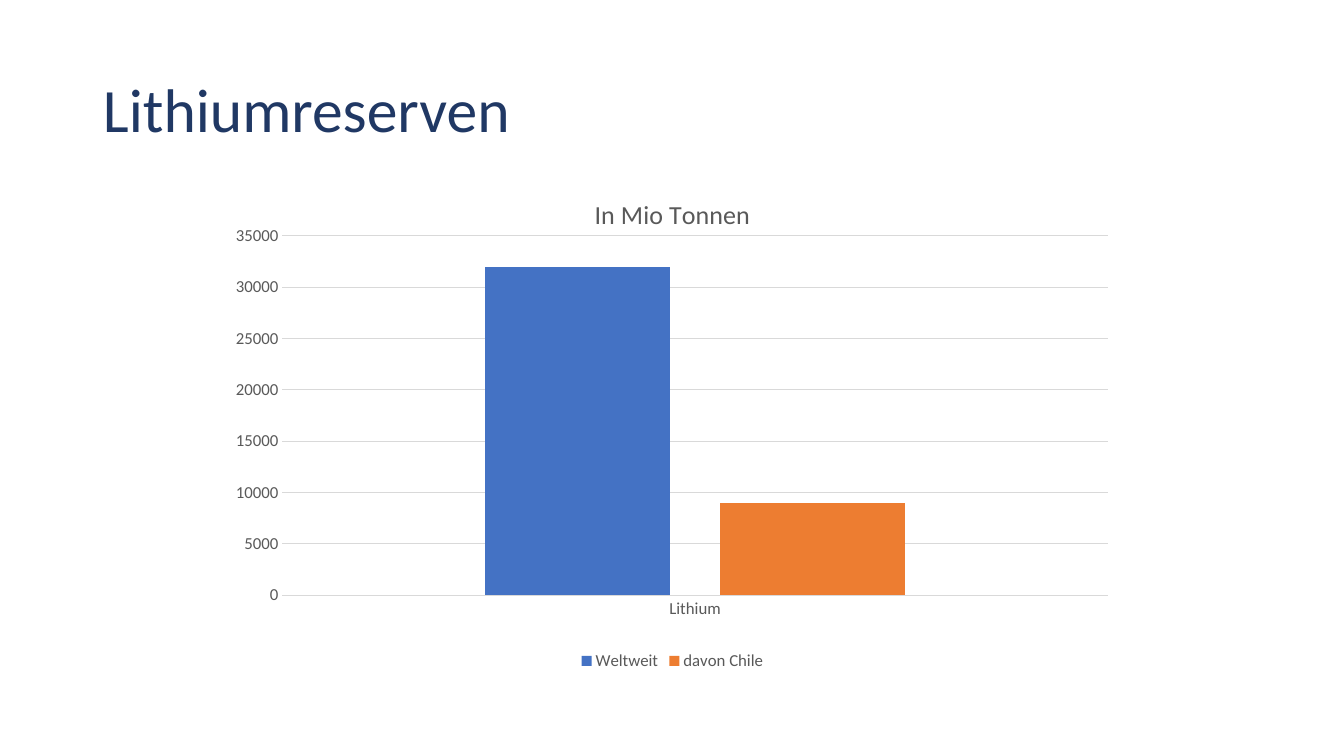
from dataclasses import dataclass

import pptx
import pptx.chart.data
import pptx.dml.color
import pptx.enum.chart
import pptx.enum.text
import pptx.oxml
import pptx.oxml.ns
import pptx.util

EMU_PER_PX = 914400 / 100.8


def px(length):
    return pptx.util.Emu(round(length * EMU_PER_PX))


def rgb(code):
    return pptx.dml.color.RGBColor.from_string(code)


@dataclass(frozen=True)
class Theme:
    font: str = "Calibri"
    title_color: str = "203864"
    label_color: str = "595959"
    grid_color: str = "D9D9D9"
    series_colors: tuple = ("4472C4", "ED7D31")
    title_size: float = 44
    chart_title_size: float = 18.6
    label_size: float = 12
    line_width: float = 0.75


class SlideBuilder:
    def __init__(self, slide, theme):
        self.slide = slide
        self.theme = theme

    def set_font(self, font, size, color):
        font.name = self.theme.font
        font.size = pptx.util.Pt(size)
        font.bold = False
        font.color.rgb = rgb(color)

    def add_title(self, text, left, top, width, height):
        box = self.slide.shapes.add_textbox(px(left), px(top), px(width), px(height))
        frame = box.text_frame
        frame.word_wrap = True
        frame.vertical_anchor = pptx.enum.text.MSO_ANCHOR.MIDDLE
        paragraph = frame.paragraphs[0]
        paragraph.text = text
        paragraph.line_spacing = 0.9
        self.set_font(paragraph.font, self.theme.title_size, self.theme.title_color)

    def add_column_chart(self, title, categories, series, left, top, width, height):
        data = pptx.chart.data.CategoryChartData()
        data.categories = categories
        for name, values in series.items():
            data.add_series(name, values)
        chart = self.slide.shapes.add_chart(
            pptx.enum.chart.XL_CHART_TYPE.COLUMN_CLUSTERED,
            px(left), px(top), px(width), px(height), data,
        ).chart
        self.set_font(chart.font, self.theme.label_size, self.theme.label_color)

        chart.has_title = True
        chart.chart_title.include_in_layout = False
        paragraph = chart.chart_title.text_frame.paragraphs[0]
        paragraph.text = title
        self.set_font(paragraph.font, self.theme.chart_title_size, self.theme.label_color)

        chart.has_legend = True
        chart.legend.position = pptx.enum.chart.XL_LEGEND_POSITION.BOTTOM
        chart.legend.include_in_layout = False

        plot = chart.plots[0]
        plot.gap_width = 219
        plot.overlap = -27
        plot.vary_by_categories = False
        for column, color in zip(plot.series, self.theme.series_colors):
            column.format.fill.solid()
            column.format.fill.fore_color.rgb = rgb(color)
        self.style_axes(chart)
        return chart

    def style_axes(self, chart):
        for axis in (chart.category_axis, chart.value_axis):
            axis.major_tick_mark = pptx.enum.chart.XL_TICK_MARK.NONE
            axis.minor_tick_mark = pptx.enum.chart.XL_TICK_MARK.NONE
        chart.value_axis.format.line.fill.background()
        chart.value_axis.has_major_gridlines = True
        gridlines = chart.value_axis.major_gridlines
        for line in (chart.category_axis.format.line, gridlines.format.line):
            line.color.rgb = rgb(self.theme.grid_color)
            line.width = pptx.util.Pt(self.theme.line_width)

    def place_plot(self, chart, **fractions):
        """Fix the inner plot area as fractions (x, y, w, h) of the chart."""
        settings = {"layoutTarget": "inner", "xMode": "edge", "yMode": "edge", **fractions}
        items = "".join(f'<c:{name} val="{value}"/>' for name, value in settings.items())
        namespace = pptx.oxml.ns.nsdecls("c")
        layout = pptx.oxml.parse_xml(
            f"<c:layout {namespace}><c:manualLayout>{items}</c:manualLayout></c:layout>"
        )
        plot_area = chart.plots[0]._element.getparent()
        for previous in plot_area.findall(pptx.oxml.ns.qn("c:layout")):
            plot_area.remove(previous)
        plot_area.insert(0, layout)


def main():
    presentation = pptx.Presentation()
    presentation.slide_width = px(1344)
    presentation.slide_height = px(756)
    slide = presentation.slides.add_slide(presentation.slide_layouts[6])
    builder = SlideBuilder(slide, Theme())

    builder.add_title("Lithiumreserven", 93, 40, 1159, 146)
    chart = builder.add_column_chart(
        "In Mio Tonnen", ["Lithium"],
        {"Weltweit": [32000], "davon Chile": [9000]},
        219, 176, 907, 499,
    )
    builder.place_plot(chart, x=0.07, y=0.12, w=0.91, h=0.72)
    presentation.save("out.pptx")


if __name__ == "__main__":
    main()
